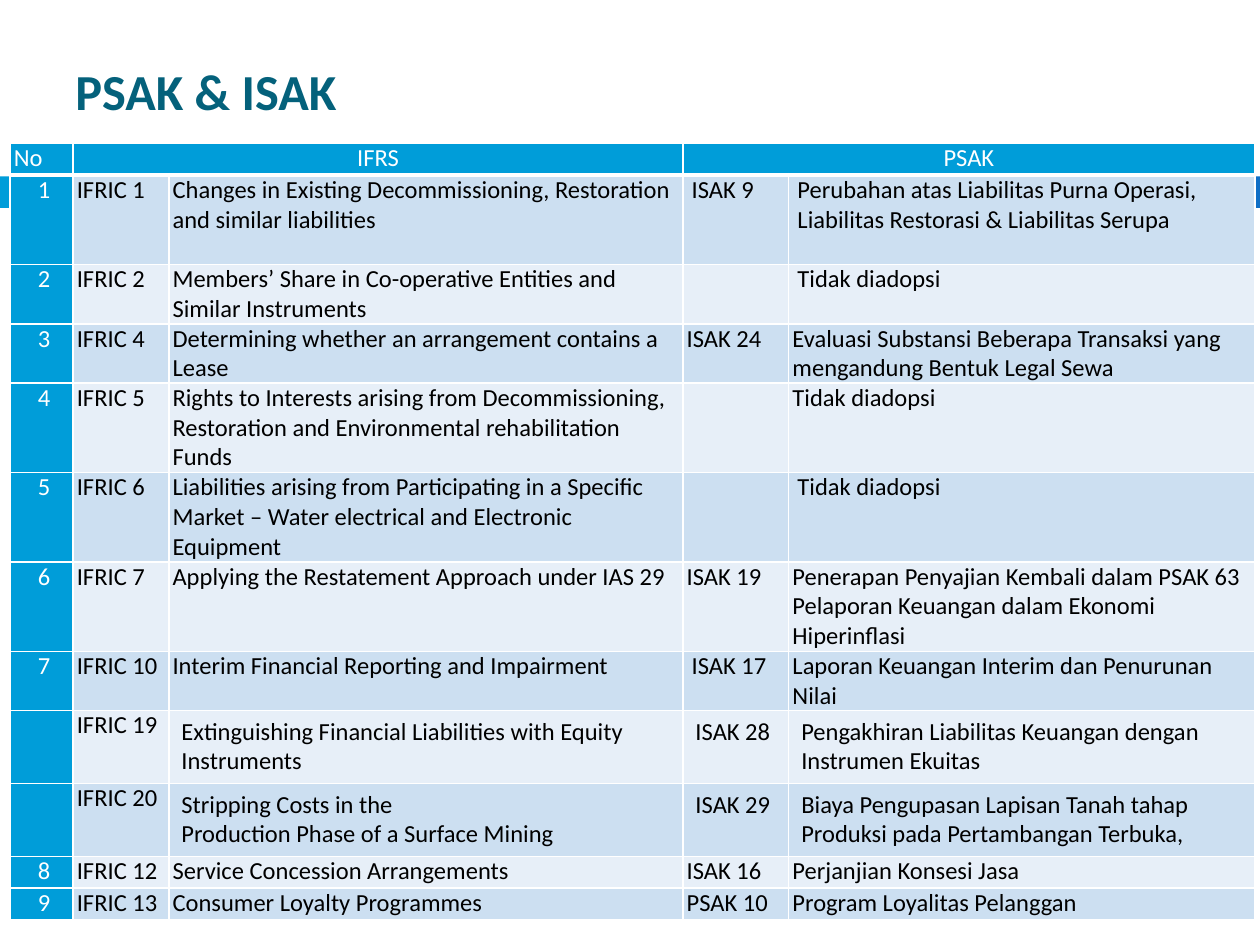
from lxml.etree import SubElement
from pptx import Presentation
from pptx.dml.color import RGBColor
from pptx.enum.shapes import MSO_SHAPE
from pptx.enum.text import MSO_ANCHOR, PP_ALIGN
from pptx.oxml.ns import qn
from pptx.util import Inches, Pt

COLORS = {"head": "009DD9", "bar": "0F6FC6", "title": "04617B", "white": "FFFFFF",
          "black": "000000", "odd": "CCDFF1", "even": "E7EFF8"}


def style(para, size, color, bold=False, align=PP_ALIGN.LEFT):
    para.alignment = align
    form = {"name": "Calibri", "size": Pt(size), "bold": bold}
    for run in para.runs:
        for key, val in form.items():
            setattr(run.font, key, val)
        run.font.color.rgb = RGBColor.from_string(COLORS[color])


def border(cell, low):
    props = cell._tc.get_or_add_tcPr()
    for side, width in {"L": 1, "R": 1, "T": 1, "B": low}.items():
        line = SubElement(props, qn("a:ln" + side), w=str(Pt(width)))
        fill = SubElement(line, qn("a:solidFill"))
        SubElement(fill, qn("a:srgbClr"), val=COLORS["white"])


prs = Presentation()
prs.slide_width, prs.slide_height = Inches(10), Inches(7.5)
slide = prs.slides.add_slide(prs.slide_layouts[6])

# Bars behind the table
for left, width, color in [(0, 0.58, "head"), (0.65, 9.35, "bar")]:
    bar = slide.shapes.add_shape(MSO_SHAPE.RECTANGLE, Inches(left), Inches(1.4),
                                 Inches(width), Inches(0.25))
    bar.shadow.inherit = False
    bar.fill.solid()
    bar.fill.fore_color.rgb = RGBColor.from_string(COLORS[color])
    bar.line.fill.background()

# Title
title = slide.shapes.add_textbox(Inches(0.5), Inches(0.42), Inches(9), Inches(0.6))
frame = title.text_frame
frame.word_wrap = True
frame.vertical_anchor = MSO_ANCHOR.MIDDLE
frame.text = "PSAK & ISAK"
style(frame.paragraphs[0], 28.8, "title", bold=True)

# Table content
rows = [
    ("No", "IFRS", "", "PSAK", ""),
    ("1", "IFRIC 1",
     "Changes in Existing Decommissioning, Restoration and similar liabilities",
     "ISAK 9",
     "Perubahan atas Liabilitas Purna Operasi, Liabilitas Restorasi & Liabilitas Serupa"),
    ("2", "IFRIC 2", "Members’ Share in Co-operative Entities and Similar Instruments",
     "", "Tidak diadopsi"),
    ("3", "IFRIC 4", "Determining whether an arrangement contains a Lease",
     "ISAK 24", "Evaluasi Substansi Beberapa Transaksi yang mengandung Bentuk Legal Sewa"),
    ("4", "IFRIC 5",
     "Rights to Interests arising from Decommissioning, Restoration and "
     "Environmental rehabilitation Funds", "", "Tidak diadopsi"),
    ("5", "IFRIC 6",
     "Liabilities arising from Participating in a Specific Market – "
     "Water electrical and Electronic Equipment", "", "Tidak diadopsi"),
    ("6", "IFRIC 7", "Applying the Restatement Approach under IAS 29", "ISAK 19",
     "Penerapan Penyajian Kembali dalam PSAK 63 Pelaporan Keuangan dalam "
     "Ekonomi Hiperinflasi"),
    ("7", "IFRIC 10", "Interim Financial Reporting and Impairment",
     "ISAK 17", "Laporan Keuangan Interim dan Penurunan Nilai"),
    ("", "IFRIC 19", "Extinguishing Financial Liabilities with Equity Instruments",
     "ISAK 28", "Pengakhiran Liabilitas Keuangan dengan Instrumen Ekuitas"),
    ("", "IFRIC 20", "Stripping Costs in the\nProduction Phase of a Surface Mining",
     "ISAK 29", "Biaya Pengupasan Lapisan Tanah tahap Produksi pada Pertambangan Terbuka,"),
    ("8", "IFRIC 12", "Service Concession Arrangements", "ISAK 16",
     "Perjanjian Konsesi Jasa"),
    ("9", "IFRIC 13", "Consumer Loyalty Programmes", "PSAK 10",
     "Program Loyalitas Pelanggan"),
]
widths = [0.5, 0.76, 4.08, 0.84, 3.7]
heights = [0.25, 0.71, 0.47, 0.47, 0.71, 0.71, 0.71, 0.47, 0.58, 0.58, 0.25, 0.25]
shifts = {(1, 3), (1, 4), (2, 4), (5, 4), (7, 3)}  # slightly indented cells
roomy = (8, 9)  # rows with wider cell margins

# Table grid
table = slide.shapes.add_table(len(rows), len(widths), Inches(0.08), Inches(1.14),
                               Inches(sum(widths)), Inches(sum(heights))).table
for col, width in zip(table.columns, widths):
    col.width = Inches(width)
for row, height in zip(table.rows, heights):
    row.height = Inches(height)
for first in (1, 3):
    table.cell(0, first).merge(table.cell(0, first + 1))

# Table cells
for i, row in enumerate(rows):
    for j, text in enumerate(row):
        cell = table.cell(i, j)
        head = i == 0 or j == 0
        wide = i in roomy and j > 1
        side, edge = (0.1, 0.05) if wide else (0.03, 0)
        shift = 0.04 if (i, j) in shifts or (i and j == 0) else 0
        margins = {"left": side + shift, "right": side, "top": edge, "bottom": edge}
        for name, size in margins.items():
            setattr(cell, "margin_" + name, Inches(size))
        border(cell, 1 if i else 3)
        cell.fill.solid()
        tone = "head" if head else "odd" if i % 2 else "even"
        cell.fill.fore_color.rgb = RGBColor.from_string(COLORS[tone])
        cell.text = text
        mid = head and (i, j) != (0, 0)
        for para in cell.text_frame.paragraphs:
            style(para, 14, "white" if head else "black",
                  align=PP_ALIGN.CENTER if mid else PP_ALIGN.LEFT)
            if not text:
                para.font.size = Pt(14)

prs.save("out.pptx")
